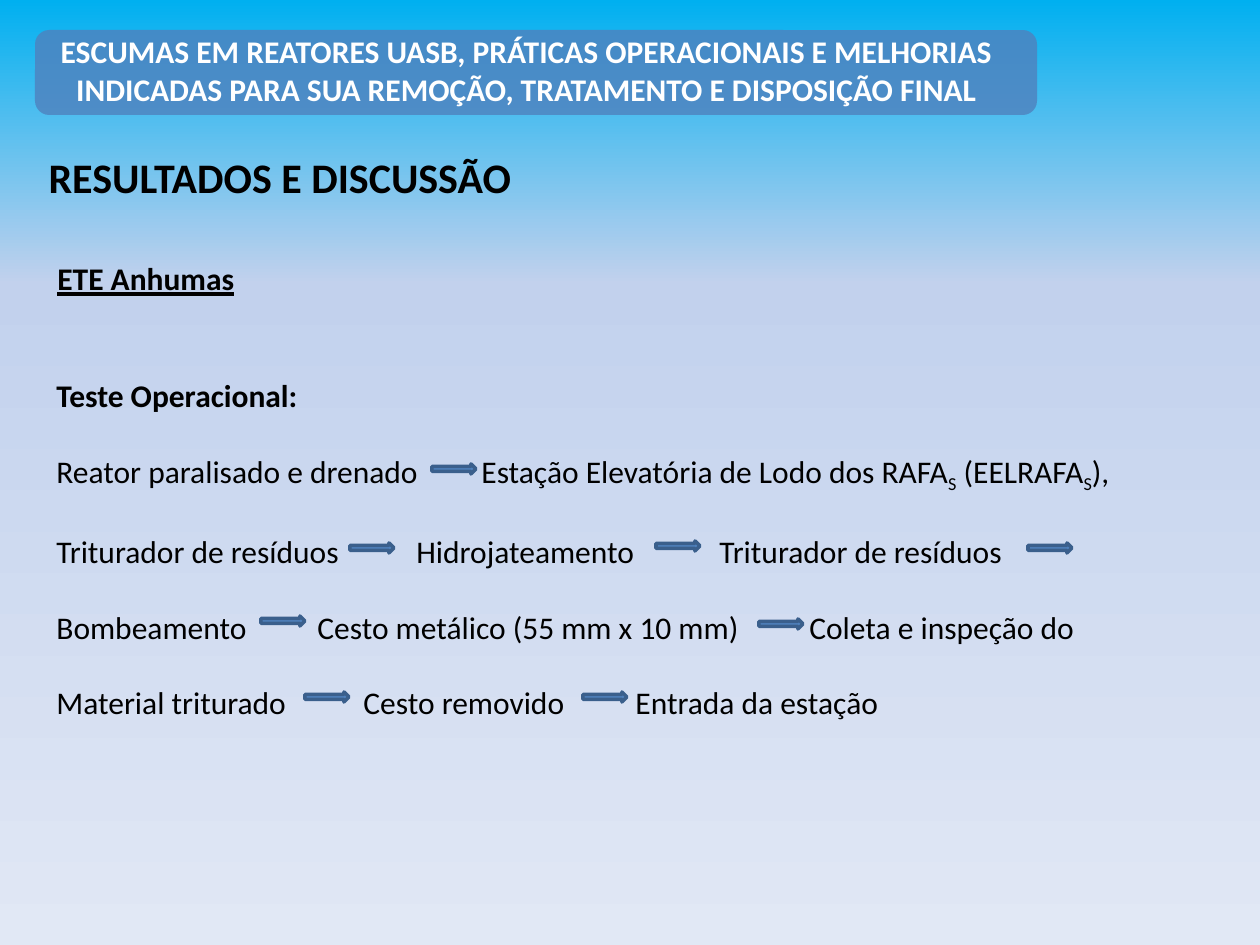
from copy import deepcopy

from lxml.etree import SubElement
from pptx import Presentation
from pptx.dml.color import RGBColor
from pptx.enum.shapes import MSO_SHAPE
from pptx.enum.text import MSO_ANCHOR, MSO_AUTO_SIZE, PP_ALIGN
from pptx.oxml.ns import qn
from pptx.util import Emu, Pt

PX = 914400 // 126
BLACK = RGBColor(0x00, 0x00, 0x00)
WHITE = RGBColor(0xFF, 0xFF, 0xFF)
BLUE = RGBColor(0x4F, 0x81, 0xBD)
DARK_BLUE = RGBColor(0x3A, 0x5F, 0x8C)
SKY = RGBColor(0x00, 0xB0, 0xF0)
MIST = RGBColor(0xC2, 0xD1, 0xED)
PALE = RGBColor(0xE1, 0xE8, 0xF5)


def box(*lengths):
    return [Emu(n * PX) for n in lengths]


def add_run(p, text, size, color=BLACK, bold=False):
    r = p.add_run()
    r.text = text
    r.font.name = "Calibri"
    r.font.size = Pt(size)
    r.font.bold = bold
    r.font.color.rgb = color
    return r


prs = Presentation()
prs.slide_width, prs.slide_height = box(1260, 945)
s = prs.slides.add_slide(prs.slide_layouts[5])

fill = s.background.fill
fill.gradient()
fill.gradient_angle = 270
stops = s.element.find(".//" + qn("a:gsLst"))
stops.insert(1, deepcopy(stops[0]))
for stop, (position, color) in zip(fill.gradient_stops, [(0, SKY), (0.3, MIST), (1, PALE)]):
    stop.position = position
    stop.color.rgb = color

banner = s.shapes.add_shape(MSO_SHAPE.ROUNDED_RECTANGLE, *box(35, 30, 1002, 85))
banner.shadow.inherit = False
banner.fill.solid()
banner.fill.fore_color.rgb = BLUE
banner.line.fill.background()
SubElement(banner.element.spPr.find(".//" + qn("a:srgbClr")), qn("a:alpha"), val="80000")

header = s.shapes.add_textbox(*box(25, 26, 1003, 89))
header.text_frame.word_wrap = True
p = header.text_frame.paragraphs[0]
p.alignment = PP_ALIGN.CENTER
add_run(p, "ESCUMAS EM REATORES UASB, PRÁTICAS OPERACIONAIS E MELHORIAS "
           "INDICADAS PARA SUA REMOÇÃO, TRATAMENTO E DISPOSIÇÃO FINAL", 18, WHITE, True)

station = s.shapes.add_textbox(*box(45, 253, 204, 50))
r = add_run(station.text_frame.paragraphs[0], "ETE Anhumas", 18, bold=True)
r.font.underline = True

title = s.shapes.title
title.left, title.top, title.width, title.height = box(36, 145, 493, 63)
tf = title.text_frame
tf.word_wrap = False
tf.auto_size = MSO_AUTO_SIZE.NONE
tf.vertical_anchor = MSO_ANCHOR.TOP
p = tf.paragraphs[0]
p.alignment = PP_ALIGN.LEFT
add_run(p, "RESULTADOS E DISCUSSÃO", 24, bold=True)

steps = s.shapes.add_textbox(*box(44, 370, 1121, 394))
tf = steps.text_frame
tf.word_wrap = True

STEPS = [
    (["Teste Operacional:"], []),
    (["Reator paralisado e drenado\tEstação Elevatória de Lodo dos RAFA", "S",
      " (EELRAFA", "S", "),"], [425]),
    (["Triturador de resíduos\tHidrojateamento\tTriturador de resíduos"], [360, 663]),
    (["Bombeamento\tCesto metálico (55 mm x 10 mm)\tColeta e inspeção do"], [261, 753]),
    (["Material triturado\tCesto removido\tEntrada da estação"], [307, 579]),
]
for i, (texts, tabs) in enumerate(STEPS):
    p = tf.paragraphs[0] if i == 0 else tf.add_paragraph()
    if tabs:
        p.space_before = Pt(21.5)
        tab_list = SubElement(p._p.get_or_add_pPr(), qn("a:tabLst"))
        for tab in tabs:
            SubElement(tab_list, qn("a:tab"), pos=str(tab * PX), algn="l")
    for text in texts:
        r = add_run(p, text, 18, bold=i == 0)
        if text == "S":
            r.font._element.set("baseline", "-25000")

ARROWS = [(432, 464), (350, 543), (656, 541), (1028, 543),
          (261, 616), (759, 619), (305, 692), (583, 692)]
for x, y in ARROWS:
    arrow = s.shapes.add_shape(MSO_SHAPE.RIGHT_ARROW, *box(x, y, 44, 10))
    arrow.shadow.inherit = False
    arrow.fill.solid()
    arrow.fill.fore_color.rgb = BLUE
    arrow.line.color.rgb = DARK_BLUE
    arrow.line.width = Pt(2)

prs.save("out.pptx")
